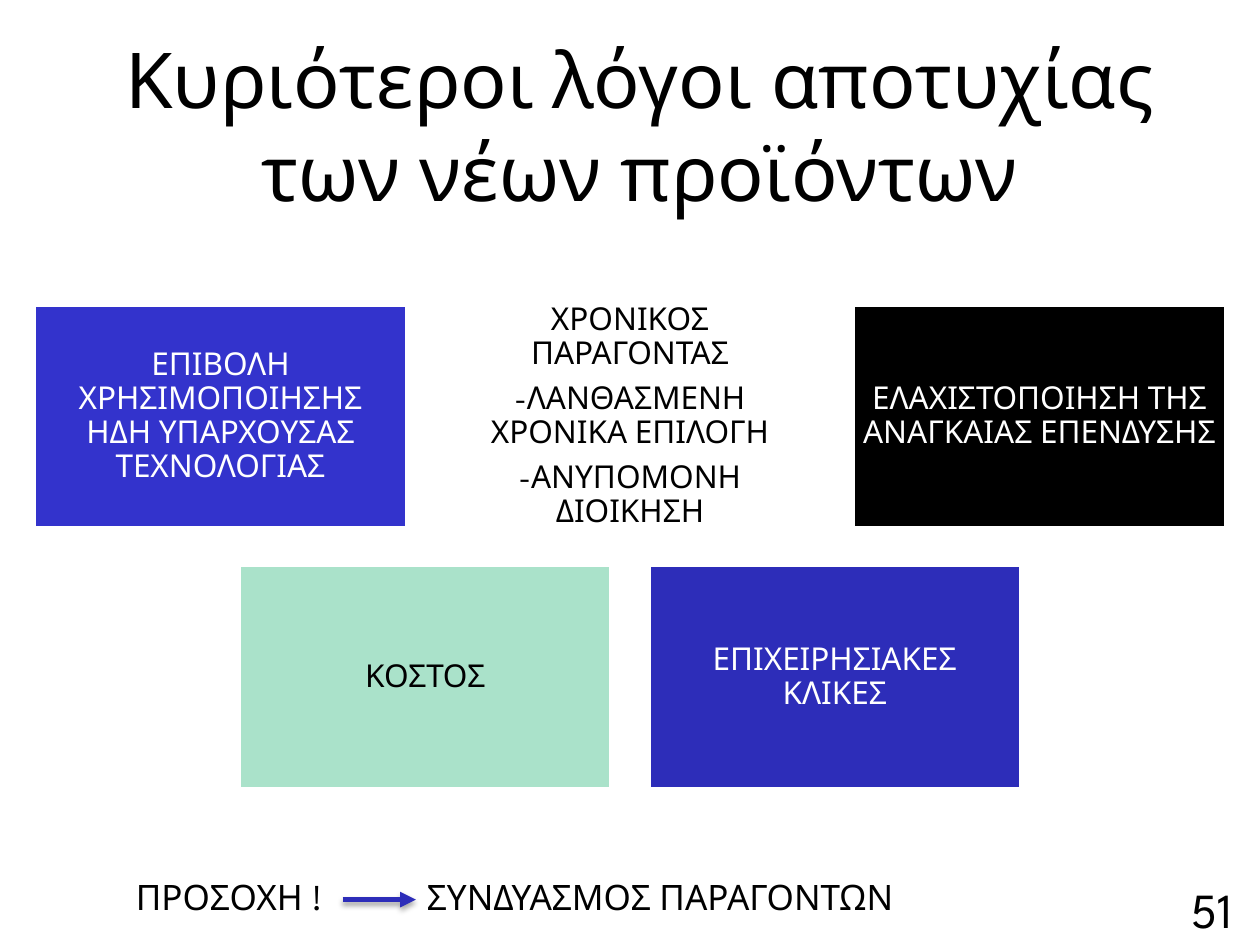
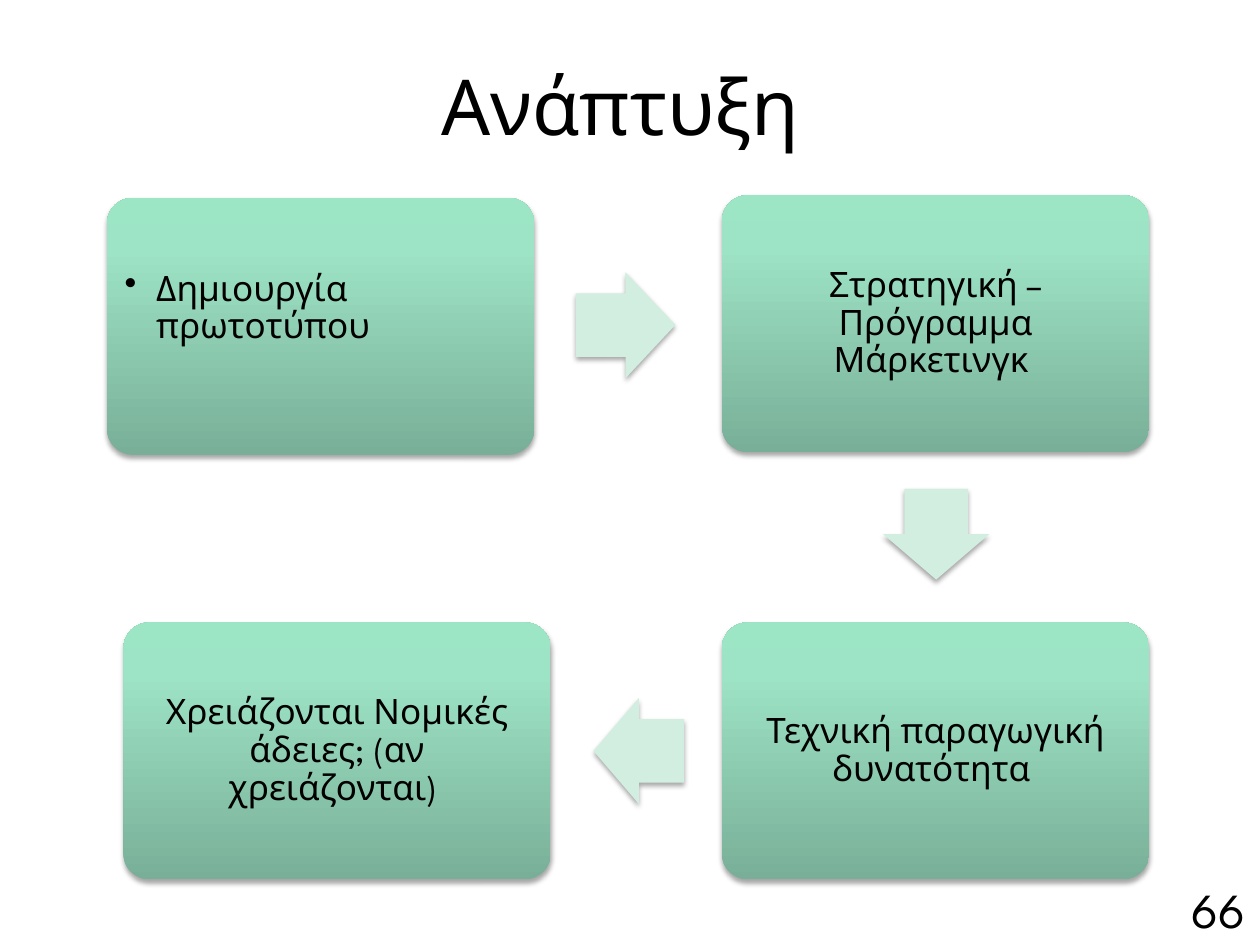
from dataclasses import dataclass

from lxml import etree
from pptx import Presentation
from pptx.dml.color import RGBColor
from pptx.enum.shapes import MSO_CONNECTOR, MSO_SHAPE
from pptx.enum.text import MSO_ANCHOR, PP_ALIGN
from pptx.oxml import parse_xml
from pptx.oxml.ns import nsdecls, qn
from pptx.util import Inches, Pt

RECT, ROUND, ARROW = MSO_SHAPE.RECTANGLE, MSO_SHAPE.ROUNDED_RECTANGLE, MSO_SHAPE.RIGHT_ARROW
STRAIGHT = MSO_CONNECTOR.STRAIGHT
TOP, MIDDLE = MSO_ANCHOR.TOP, MSO_ANCHOR.MIDDLE
LEFT, CENTER = PP_ALIGN.LEFT, PP_ALIGN.CENTER
TITLE_ONLY = 5


@dataclass(frozen=True)
class Theme:
    font: str = "League Spartan"
    black: str = "000000"
    white: str = "FFFFFF"
    blue: str = "3333CC"
    navy: str = "2D2DB9"
    mint: str = "AAE2CA"
    pale: str = "D1EEE1"
    fade: tuple = ((0, "79AF98"), (80, "9DE3C5"), (100, "9CE6C6"))
    title: int = 44
    number: int = 28
    body: int = 20
    tile: int = 18


THEME = Theme()


def rgb(code):
    return RGBColor.from_string(code)


def write(par, text, size, color=THEME.black, align=LEFT):
    par.alignment = align
    run = par.add_run()
    run.text = text
    run.font.name = THEME.font
    run.font.size = Pt(size)
    run.font.color.rgb = rgb(color)


def add_effects(shape, shadow=True):
    inner = (
        '<a:outerShdw blurRad="39370" dist="22860" dir="5400000" rotWithShape="0">'
        '<a:srgbClr val="000000"><a:alpha val="35000"/></a:srgbClr></a:outerShdw>'
    ) if shadow else ""
    props = shape._element.spPr
    for old in props.findall(qn("a:effectLst")):
        props.remove(old)
    props.append(parse_xml(f'<a:effectLst {nsdecls("a")}>{inner}</a:effectLst>'))


def add_fade(shape):
    """Fill with the shared three-stop gradient."""
    stops = "".join(
        f'<a:gs pos="{pos * 1000}"><a:srgbClr val="{color}"/></a:gs>'
        for pos, color in THEME.fade
    )
    fill = parse_xml(
        f'<a:gradFill {nsdecls("a")} rotWithShape="1"><a:gsLst>{stops}</a:gsLst>'
        '<a:lin ang="16200000" scaled="0"/></a:gradFill>'
    )
    shape._element.spPr.find(qn("a:prstGeom")).addnext(fill)


def add_bullet(par):
    props = par._p.get_or_add_pPr()
    props.set("marL", str(Inches(0.25)))
    props.set("indent", str(-Inches(0.25)))
    etree.SubElement(props, qn("a:buChar")).set("char", "•")


def add_tab(par, place):
    tabs = etree.SubElement(par._p.get_or_add_pPr(), qn("a:tabLst"))
    tab = etree.SubElement(tabs, qn("a:tab"))
    tab.set("pos", str(Inches(place)))
    tab.set("algn", "l")


def add_form(slide, kind, box):
    shape = slide.shapes.add_shape(kind, *map(Inches, box))
    shape.shadow.inherit = False
    return shape


def fill_text(shape, lines, size, color, inset, bullet=False):
    """Write tight paragraphs inside a shape."""
    frame = shape.text_frame
    frame.word_wrap = True
    frame.vertical_anchor = TOP if bullet else MIDDLE
    frame.margin_left = frame.margin_right = Inches(inset)
    frame.margin_top = Inches(0.52 if bullet else inset)
    frame.margin_bottom = Inches(inset)
    for i, line in enumerate(lines):
        par = frame.paragraphs[0] if i == 0 else frame.add_paragraph()
        par.line_spacing = 0.9
        par.space_after = Pt(0.35 * size)
        if bullet:
            add_bullet(par)
        write(par, line, size, color, LEFT if bullet else CENTER)


def start_slide(deck, title, number, left, top):
    slide = deck.slides.add_slide(deck.slide_layouts[TITLE_ONLY])
    head = slide.shapes.title
    head.left, head.top, head.width, head.height = map(Inches, (left, top, 8.5, 1.25))
    head.text_frame.vertical_anchor = MIDDLE
    write(head.text_frame.paragraphs[0], title, THEME.title, align=CENTER)
    label = slide.shapes.add_textbox(*map(Inches, (9.36, 6.93, 0.64, 0.57)))
    label.text_frame.word_wrap = False
    write(label.text_frame.paragraphs[0], number, THEME.number)
    return slide


def add_tiles(slide, box, rows):
    """Stack rows of equal tiles, each row centred in the box."""
    left, top, width = box
    wide, high, gap = 2.95, 1.77, 0.3
    for i, row in enumerate(rows):
        edge = left + (width - len(row) * (wide + gap) + gap) / 2
        for j, (fill, color, lines) in enumerate(row):
            place = edge + j * (wide + gap), top + i * (high + gap), wide, high
            tile = add_form(slide, RECT, place)
            tile.fill.solid()
            tile.fill.fore_color.rgb = rgb(fill)
            tile.line.color.rgb = rgb(THEME.white)
            tile.line.width = Pt(2)
            fill_text(tile, lines, THEME.tile, color, 0.07)


def add_warning(slide, box):
    left, top, width, height = box
    note = slide.shapes.add_textbox(*map(Inches, box))
    note.text_frame.word_wrap = True
    par = note.text_frame.paragraphs[0]
    add_tab(par, 2.31)
    write(par, "ΠΡΟΣΟΧΗ !\t", THEME.body)
    write(par, "ΣΥΝΔΥΑΣΜΟΣ ΠΑΡΑΓΟΝΤΩΝ", THEME.body)
    level = top + 0.24
    arrow = slide.shapes.add_connector(
        STRAIGHT, *map(Inches, (left + 1.74, level, left + 2.32, level)))
    arrow.line.color.rgb = rgb(THEME.navy)
    arrow.line.width = Pt(3)
    etree.SubElement(arrow.line._get_or_add_ln(), qn("a:tailEnd")).set("type", "triangle")
    add_effects(arrow)


def add_step(slide, left, top, text, bullet=False):
    step = add_form(slide, ROUND, (left, top, 3.39, 2.04))
    step.adjustments[0] = 0.1
    add_fade(step)
    step.line.fill.background()
    add_effects(step)
    fill_text(step, [text], THEME.body, THEME.black, 0.08, bullet)


def add_arrow(slide, left, top, width, turn):
    arrow = add_form(slide, ARROW, (left, top, width, 0.84))
    arrow.adjustments[0], arrow.adjustments[1] = 0.6, 0.5
    arrow.rotation = turn
    arrow.fill.solid()
    arrow.fill.fore_color.rgb = rgb(THEME.pale)
    arrow.line.fill.background()
    add_effects(arrow)


def build_reasons(deck):
    slide = start_slide(
        deck, "Κυριότεροι λόγοι αποτυχίας των νέων προϊόντων", "51", 0.83, 0.36)
    add_warning(slide, (0.98, 6.9, 6.83, 0.43))
    black, white = THEME.black, THEME.white
    add_tiles(slide, (0, 2.42, 10), [
        [
            (THEME.blue, white, ["ΕΠΙΒΟΛΗ ΧΡΗΣΙΜΟΠΟΙΗΣΗΣ ΗΔΗ ΥΠΑΡΧΟΥΣΑΣ ΤΕΧΝΟΛΟΓΙΑΣ"]),
            (white, black, ["ΧΡΟΝΙΚΟΣ ΠΑΡΑΓΟΝΤΑΣ", "-ΛΑΝΘΑΣΜΕΝΗ ΧΡΟΝΙΚΑ ΕΠΙΛΟΓΗ",
                            "-ΑΝΥΠΟΜΟΝΗ ΔΙΟΙΚΗΣΗ"]),
            (black, white, ["ΕΛΑΧΙΣΤΟΠΟΙΗΣΗ ΤΗΣ ΑΝΑΓΚΑΙΑΣ ΕΠΕΝΔΥΣΗΣ"]),
        ],
        [
            (THEME.mint, black, ["ΚΟΣΤΟΣ"]),
            (THEME.navy, white, ["ΕΠΙΧΕΙΡΗΣΙΑΚΕΣ ΚΛΙΚΕΣ"]),
        ],
    ])


def build_growth(deck):
    slide = start_slide(deck, "Ανάπτυξη ", "66", 0.75, 0.21)
    right, low = 5.73, 4.94
    add_step(slide, 0.85, 1.57, "Δημιουργία πρωτοτύπου", bullet=True)
    add_arrow(slide, 4.57, 2.16, 0.79, 359.8)
    add_step(slide, right, 1.55, "Στρατηγική – Πρόγραμμα Μάρκετινγκ ")
    add_arrow(slide, 7.07, 3.82, 0.72, 90)
    add_step(slide, right, low, "Τεχνική παραγωγική δυνατότητα ")
    add_arrow(slide, 4.71, 5.54, 0.72, 180)
    add_step(slide, 0.98, low, "Χρειάζονται Νομικές άδειες; (αν χρειάζονται) ")


def main():
    deck = Presentation()
    deck.slide_width, deck.slide_height = Inches(10), Inches(7.5)
    build_reasons(deck)
    build_growth(deck)
    deck.save("out.pptx")


if __name__ == "__main__":
    main()
